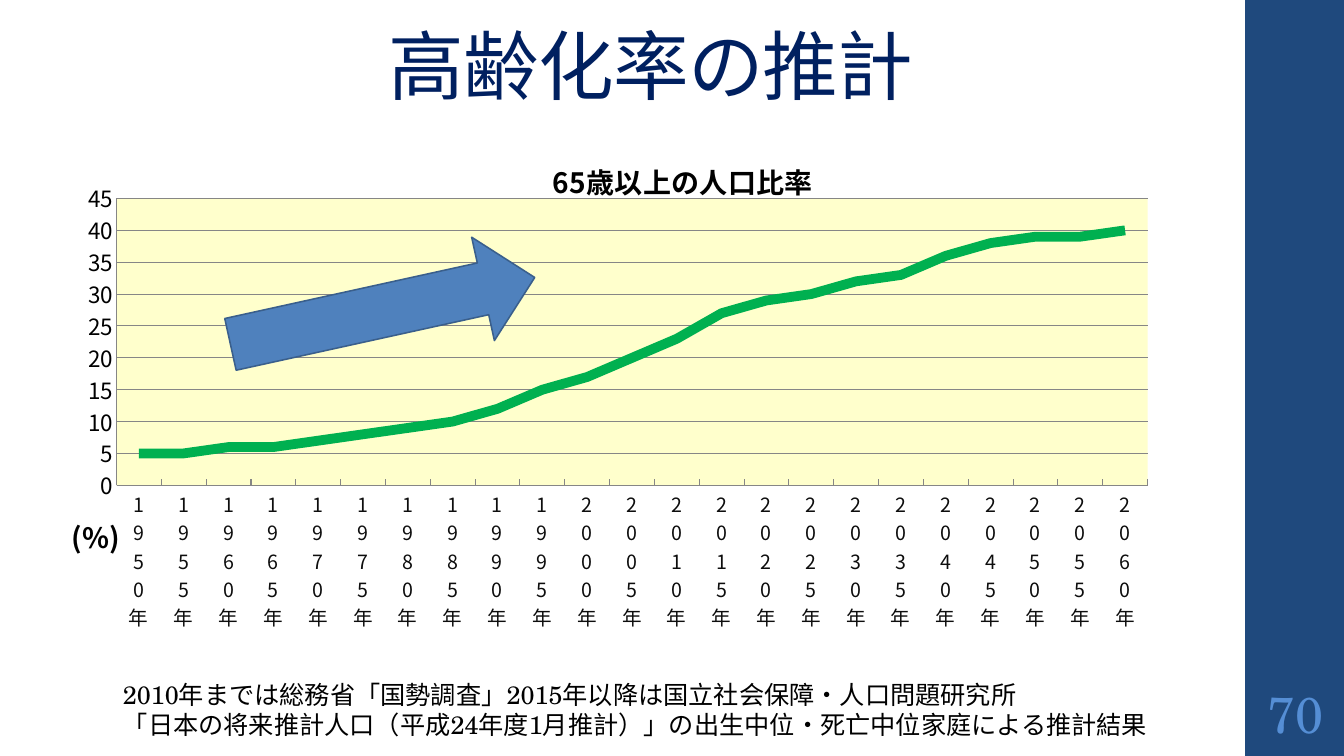
"""Build the slide on the projected share of people aged 65 and over."""
from lxml.etree import SubElement
from pptx import Presentation
from pptx.chart.data import CategoryChartData
from pptx.dml.color import RGBColor
from pptx.enum.chart import XL_CHART_TYPE as Chart, XL_TICK_MARK as Tick
from pptx.enum.shapes import MSO_SHAPE as Shape
from pptx.enum.text import MSO_ANCHOR as Anchor, PP_ALIGN as Align
from pptx.oxml import parse_xml
from pptx.oxml.ns import nsdecls, qn
from pptx.util import Inches, Pt

SANS, SERIF = "Noto Sans CJK JP", "TeX Gyre Schola"
HEADING = "高齢化率の推計"
PAGE_NUMBER = "70"
CHART_HEADING = "65歳以上の人口比率"
UNIT = "(%)"
SOURCE_NOTE = [
    "2010年までは総務省「国勢調査」2015年以降は国立社会保障・人口問題研究所",
    "「日本の将来推計人口（平成24年度1月推計）」の出生中位・死亡中位家庭による推計結果",
]
YEARS = [f"{year}年" for year in range(1950, 2061, 5)]
SHARES = [5, 5, 6, 6, 7, 8, 9, 10, 12, 15, 17, 20,
          23, 27, 29, 30, 32, 33, 36, 38, 39, 39, 40]

PLACES = {
    "sidebar": (12.35, 0, 0.98, 7.5),
    "heading": (2.48, 0.24, 7.95, 0.91),
    "page": (12.35, 6.75, 1, 0.65),
    "chart": (0.6, 1.35, 12.35, 5.34),
    "note": (1.12, 6.69, 10.66, 0.71),
    "arrow": (2.25, 2.56, 3.09, 1.05),
}


def place(part):
    return [Inches(length) for length in PLACES[part]]


def rgb(value):
    return RGBColor.from_string(value)


def set_all(target, values):
    for name, value in values.items():
        setattr(target, name, value)


def style_font(font, size, color, name=SANS, bold=False):
    set_all(font, {"size": Pt(size), "name": name, "bold": bold})
    font.color.rgb = rgb(color)


def write(frame, lines, size, color, name=SANS, bold=False, align=None, spacing=None):
    frame.text = "\n".join(lines)
    for paragraph in frame.paragraphs:
        set_all(paragraph, {"alignment": align, "line_spacing": spacing})
        for run in paragraph.runs:
            style_font(run.font, size, color, name, bold)


def set_insets(frame, anchor, left, top, right, bottom):
    set_all(frame, {
        "word_wrap": True, "vertical_anchor": anchor,
        "margin_left": Inches(left), "margin_top": Inches(top),
        "margin_right": Inches(right), "margin_bottom": Inches(bottom),
    })


def add_solid(shapes, preset, part, fill, outline=None):
    solid = shapes.add_shape(preset, *place(part))
    solid.shadow.inherit = False
    solid.fill.solid()
    solid.fill.fore_color.rgb = rgb(fill)
    if outline:
        solid.line.color.rgb = rgb(outline)
        solid.line.width = Pt(1.1)
    else:
        solid.line.fill.background()
    return solid


def set_layout(parent, index, values):
    for old in parent.findall(qn("c:layout")):
        parent.remove(old)
    layout = parse_xml(f"<c:layout {nsdecls('c')}><c:manualLayout/></c:layout>")
    for tag, value in values.items():
        SubElement(layout[0], qn(f"c:{tag}")).set("val", str(value))
    parent.insert(index, layout)


def add_east_asian_font(root):
    for latin in list(root.iter(qn("a:latin"))):
        latin.addnext(parse_xml(f'<a:ea {nsdecls("a")} typeface="{SANS}"/>'))


def add_share_chart(shapes):
    shares = CategoryChartData()
    shares.categories = YEARS
    shares.add_series(CHART_HEADING, SHARES)
    chart = shapes.add_chart(Chart.LINE, *place("chart"), shares).chart
    set_all(chart, {"has_legend": False, "has_title": True})
    style_font(chart.font, 10, "000000", SERIF)
    write(chart.chart_title.text_frame, [CHART_HEADING], 20, "000000", bold=True)

    chart.plots[0].vary_by_categories = False
    trend = chart.plots[0].series[0]
    trend.smooth = False
    trend.format.line.color.rgb = rgb("00B050")
    trend.format.line.width = Pt(7)

    years, percent = chart.category_axis, chart.value_axis
    for axis, size, color in ((years, 14, "0D0D0D"), (percent, 16, "000000")):
        set_all(axis, {"major_tick_mark": Tick.INSIDE, "minor_tick_mark": Tick.NONE})
        style_font(axis.tick_labels.font, size, color)
        axis.format.line.color.rgb = rgb("868686")
        axis.format.line.width = Pt(0.75)
    set_all(percent, {"minimum_scale": 0, "maximum_scale": 45, "major_unit": 5,
                      "has_major_gridlines": True, "has_title": True})
    percent.major_gridlines.format.line.color.rgb = rgb("868686")
    percent.major_gridlines.format.line.width = Pt(0.75)
    write(percent.axis_title.text_frame, [UNIT], 20, "000000", bold=True)

    stacked = years.tick_labels.font and chart.element.xpath(".//c:catAx/c:txPr/a:bodyPr")[0]
    stacked.set("rot", "0")
    stacked.set("vert", "wordArtVert")
    unit_title = chart.element.xpath(".//c:valAx/c:title")[0]
    unit_body = unit_title.find(".//" + qn("a:bodyPr"))
    unit_body.set("rot", "0")
    unit_body.set("vert", "horz")
    set_layout(unit_title, 1, {"xMode": "edge", "yMode": "edge", "x": 0.005, "y": 0.69})

    plot_area = chart.element.xpath(".//c:plotArea")[0]
    set_layout(plot_area, 0, {"layoutTarget": "inner", "xMode": "edge", "yMode": "edge",
                              "x": 0.045, "y": 0.116, "w": 0.828, "h": 0.533})
    plot_area.append(parse_xml(
        f'<c:spPr {nsdecls("c", "a")}><a:solidFill><a:srgbClr val="FFFFCC"/></a:solidFill>'
        "<a:ln><a:noFill/></a:ln></c:spPr>"))
    add_east_asian_font(chart.element)


def main():
    deck = Presentation()
    set_all(deck, {"slide_width": Inches(13.33), "slide_height": Inches(7.5)})
    slide = deck.slides.add_slide(deck.slide_layouts[5])
    shapes = slide.shapes

    add_solid(shapes, Shape.RECTANGLE, "sidebar", "1F497D")

    heading = shapes.title
    set_all(heading, dict(zip(("left", "top", "width", "height"), place("heading"))))
    set_insets(heading.text_frame, Anchor.BOTTOM, 0.1, 0.03, 0.1, 0.05)
    write(heading.text_frame, [HEADING], 54, "002060", align=Align.CENTER, spacing=0.9)
    heading.text_frame.paragraphs[0].runs[0].font._element.set("spc", "-50")

    page = shapes.add_textbox(*place("page")).text_frame
    set_insets(page, Anchor.MIDDLE, 0.05, 0.05, 0.05, 0.05)
    write(page, [PAGE_NUMBER], 36, "558ED5", SERIF, align=Align.CENTER)

    add_share_chart(shapes)

    note = shapes.add_textbox(*place("note")).text_frame
    set_insets(note, Anchor.TOP, 0.1, 0.05, 0.1, 0.05)
    write(note, SOURCE_NOTE, 18, "000000", SERIF)

    arrow = add_solid(shapes, Shape.RIGHT_ARROW, "arrow", "4F81BD", "3A5F8C")
    arrow.rotation = 347.6

    add_east_asian_font(slide.element)
    deck.save("out.pptx")


if __name__ == "__main__":
    main()
